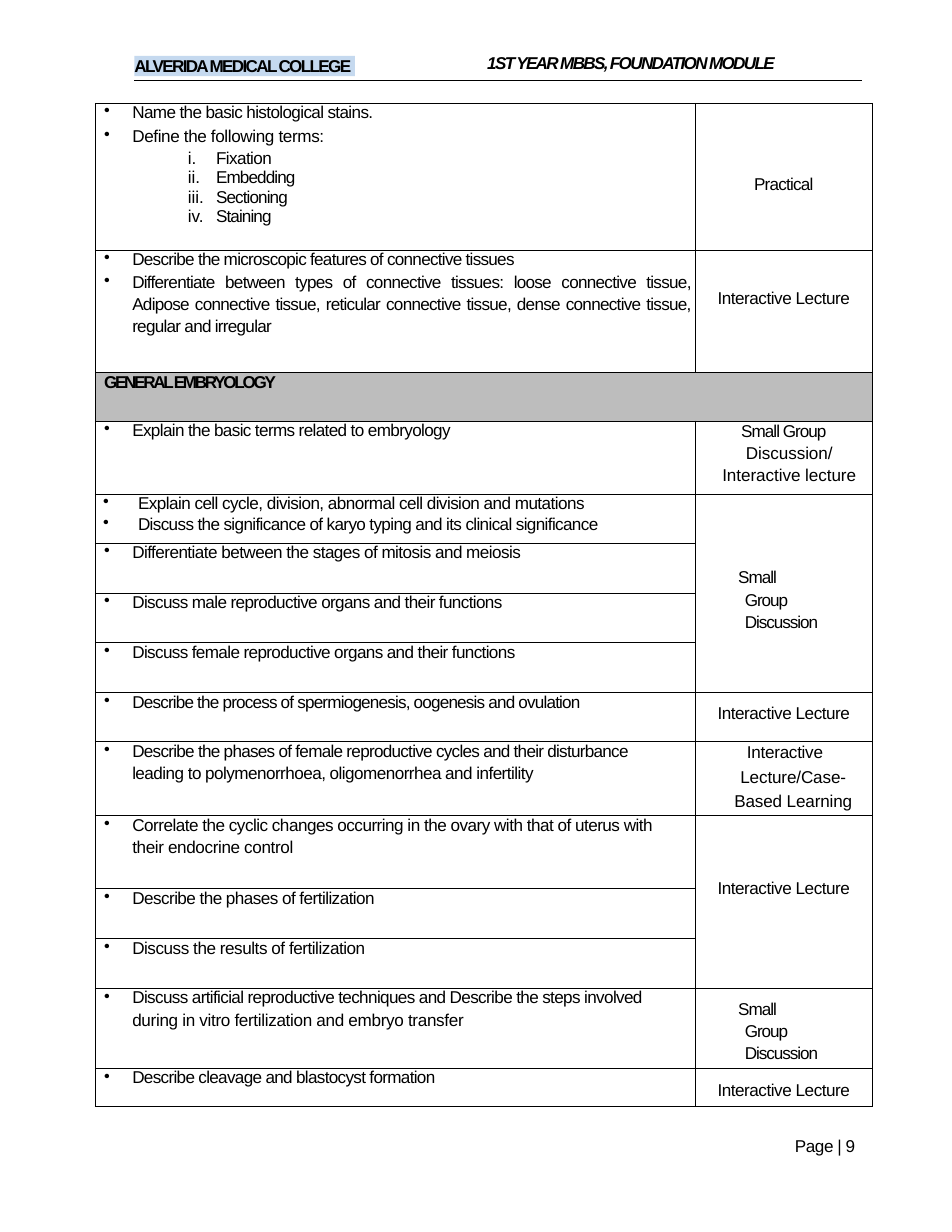
"""Build a page of a medical module outline with a table of learning objectives."""
from lxml import etree
from pptx import Presentation
from pptx.dml.color import RGBColor
from pptx.enum import shapes, text
from pptx.oxml import ns
from pptx.util import Cm, Pt

BLACK = RGBColor(0, 0, 0)
GREY = RGBColor(0xBD, 0xBD, 0xBD)
BLUE = RGBColor(0xC5, 0xD9, 0xEF)
LEFT, MID, JUST = text.PP_ALIGN.LEFT, text.PP_ALIGN.CENTER, text.PP_ALIGN.JUSTIFY
CHAR, ROMAN = ("buChar", "char", "•"), ("buAutoNum", "type", "romanLcPeriod")

# style: left margin, first-line indent, alignment, bullet, space before, line spacing
STYLES = {
    "plain": (0, 0, LEFT, None, 0, None),
    "line": (0, 0, LEFT, None, 0, Pt(12.9)),
    "item": (0.84, -0.64, LEFT, CHAR, 0, None),
    "next": (0.84, -0.64, LEFT, CHAR, 3, None),
    "just": (0.84, -0.64, JUST, CHAR, 0.7, 1.16),
    "wide": (0.97, -0.79, LEFT, CHAR, 0.8, None),
    "first": (2.74, -0.64, LEFT, ROMAN, 2, None),
    "roman": (2.74, -0.64, LEFT, ROMAN, 0.2, None),
    "cont": (0.84, 0, LEFT, None, 2.3, None),
    "head": (0.2, 0, LEFT, None, 0, Pt(12.7)),
    "mid": (0, 0, MID, None, 0, None),
    "small": (1.04, 0, LEFT, None, 0, Pt(12.7)),
    "both": (0.25, 0, MID, None, 0.2, 1.16),
    "inter": (1.17, 0, LEFT, None, 0, Pt(13.1)),
    "case": (0.43, 0, MID, None, 0.8, Pt(15.5)),
    "group": (1.12, -0.15, LEFT, None, 0, 1.17),
}
TALK = [("mid", "Interactive Lecture", -0.3)]
GROUP = [("group", "Small\vGroup\vDiscussion", -0.67)]

# row: height, objectives, top margin of the method, method
ROWS = [
    (3.33, [("item", "Name the basic histological stains.", -0.43),
            ("next", "Define the following terms:", -0.25),
            ("first", "Fixation", -0.4), ("roman", "Embedding", -0.6),
            ("roman", "Sectioning", -0.6), ("roman", "Staining", -0.6)],
     1.63, [("mid", "Practical", -0.5)]),
    (2.77, [("item", "Describe the microscopic features of connective tissues", -0.48),
            ("just", "Differentiate between types of connective tissues: loose connective "
             "tissue, Adipose connective tissue, reticular connective tissue, dense "
             "connective tissue, regular and irregular", -0.47)], 0.89, TALK),
    (1.11, [("head", "GENERAL EMBRYOLOGY", -1.5)], 0, []),
    (1.66, [("item", "Explain the basic terms related to embryology", -0.43)],
     0, [("small", "Small Group", -0.65),
         ("both", "Discussion/\vInteractive lecture", -0.05)]),
    (1.11, [("wide", "Explain cell cycle, division, abnormal cell division and mutations", -0.38),
            ("wide", "Discuss the significance of karyo typing and its clinical significance",
             -0.43)], 1.61, GROUP),
    (1.13, [("item", "Differentiate between the stages of mitosis and meiosis", -0.38)], 0, []),
    (1.13, [("item", "Discuss male reproductive organs and their functions", -0.43)], 0, []),
    (1.13, [("item", "Discuss female reproductive organs and their functions", -0.43)], 0, []),
    (1.11, [("item", "Describe the process of spermiogenesis, oogenesis and ovulation", -0.53)],
     0.25, TALK),
    (1.68, [("item", "Describe the phases of female reproductive cycles and their disturbance",
             -0.48),
            ("cont", "leading to polymenorrhoea, oligomenorrhea and infertility", -0.36)],
     0, [("inter", "Interactive", -0.2), ("case", "Lecture/Case-\vBased Learning", -0.1)]),
    (1.66, [("item", "Correlate the cyclic changes occurring in the ovary with that of uterus with",
             -0.35),
            ("cont", "their endocrine control", -0.25)], 1.43, TALK),
    (1.13, [("item", "Describe the phases of fertilization", -0.38)], 0, []),
    (1.13, [("item", "Discuss the results of fertilization", -0.3)], 0, []),
    (1.81, [("item", "Discuss artificial reproductive techniques and Describe the steps involved",
             -0.43),
            ("cont", "during in vitro fertilization and embryo transfer", -0.24)], 0.18, GROUP),
    (0.86, [("item", "Describe cleavage and blastocyst formation", -0.45)], 0.28, TALK),
]


def write(frame, paras, top=0, bold=False, slant=False):
    frame.word_wrap = True
    for n, (style, words, space) in enumerate(paras):
        left, dent, align, mark, gap, lead = STYLES[style]
        par = frame.paragraphs[0] if n == 0 else frame.add_paragraph()
        par.text = words
        prop = par._p.get_or_add_pPr()
        prop.set("marL", str(Cm(left)))
        prop.set("indent", str(Cm(dent)))
        if mark:
            tag, key, val = mark
            etree.SubElement(prop, ns.qn("a:" + tag)).set(key, val)
        par.alignment = align
        par.space_before = Pt(gap)
        if lead:
            par.line_spacing = lead
        font = par.font
        font.name, font.size, font.bold, font.italic = "Arial", Pt(11), bold, slant
        font.color.rgb = BLACK
        for run in par.runs:
            run._r.get_or_add_rPr().set("spc", str(round(space * 100)))


def edge(cell):
    prop = cell._tc.get_or_add_tcPr()
    for n, side in enumerate("LRTB"):
        line = etree.Element(ns.qn("a:ln" + side), w=str(Pt(0.5)))
        fill = etree.SubElement(line, ns.qn("a:solidFill"))
        etree.SubElement(fill, ns.qn("a:srgbClr")).set("val", str(BLACK))
        prop.insert(n, line)


prs = Presentation()
prs.slide_width, prs.slide_height = Cm(21.59), Cm(27.94)
page = prs.slides.add_slide(prs.slide_layouts[6])

rule = page.shapes.add_connector(
    shapes.MSO_CONNECTOR.STRAIGHT, Cm(3.05), Cm(1.83), Cm(19.56), Cm(1.83))
rule.line.color.rgb = BLACK
rule.line.width = Pt(0.75)
etree.SubElement(rule._element.spPr, ns.qn("a:effectLst"))

name = page.shapes.add_shape(
    shapes.MSO_SHAPE.RECTANGLE, Cm(3.05), Cm(1.27), Cm(5), Cm(0.46))
name.shadow.inherit = False
name.fill.solid()
name.fill.fore_color.rgb = BLUE
name.line.fill.background()
title = page.shapes.add_textbox(Cm(11.05), Cm(1.2), Cm(8.59), Cm(0.5))
foot = page.shapes.add_textbox(Cm(18.03), Cm(25.76), Cm(1.63), Cm(0.46))
for box, style, words, space, bold, slant in (
        (name, "line", "ALVERIDA MEDICAL COLLEGE", -1.1, True, False),
        (title, "plain", "1ST YEAR MBBS, FOUNDATION MODULE", -1.1, True, True),
        (foot, "plain", "Page | 9", -0.3, False, False)):
    frame = box.text_frame
    frame.margin_left = frame.margin_right = frame.margin_top = frame.margin_bottom = 0
    frame.vertical_anchor = text.MSO_ANCHOR.TOP
    write(frame, [(style, words, space)], bold=bold, slant=slant)

grid = page.shapes.add_table(
    len(ROWS), 2, Cm(2.16), Cm(2.34), Cm(17.62), Cm(22.75)).table
grid.first_row = grid.horz_banding = False
grid.columns[0].width, grid.columns[1].width = Cm(13.61), Cm(4.01)
for r, (high, goals, top, mode) in enumerate(ROWS):
    grid.rows[r].height = Cm(high)
    band = goals[0][0] == "head"
    for c, (paras, drop) in enumerate(((goals, 0), (mode, top))):
        cell = grid.cell(r, c)
        cell.margin_left = cell.margin_bottom = 0
        cell.margin_right = Cm(0.1) if c == 0 else 0
        cell.margin_top = Cm(drop)
        if band:
            cell.fill.solid()
            cell.fill.fore_color.rgb = GREY
        else:
            cell.fill.background()
        edge(cell)
        write(cell.text_frame, paras, bold=band)
for top, left, low, right in ((2, 0, 2, 1), (4, 1, 7, 1), (10, 1, 12, 1)):
    grid.cell(top, left).merge(grid.cell(low, right))

prs.save("out.pptx")
